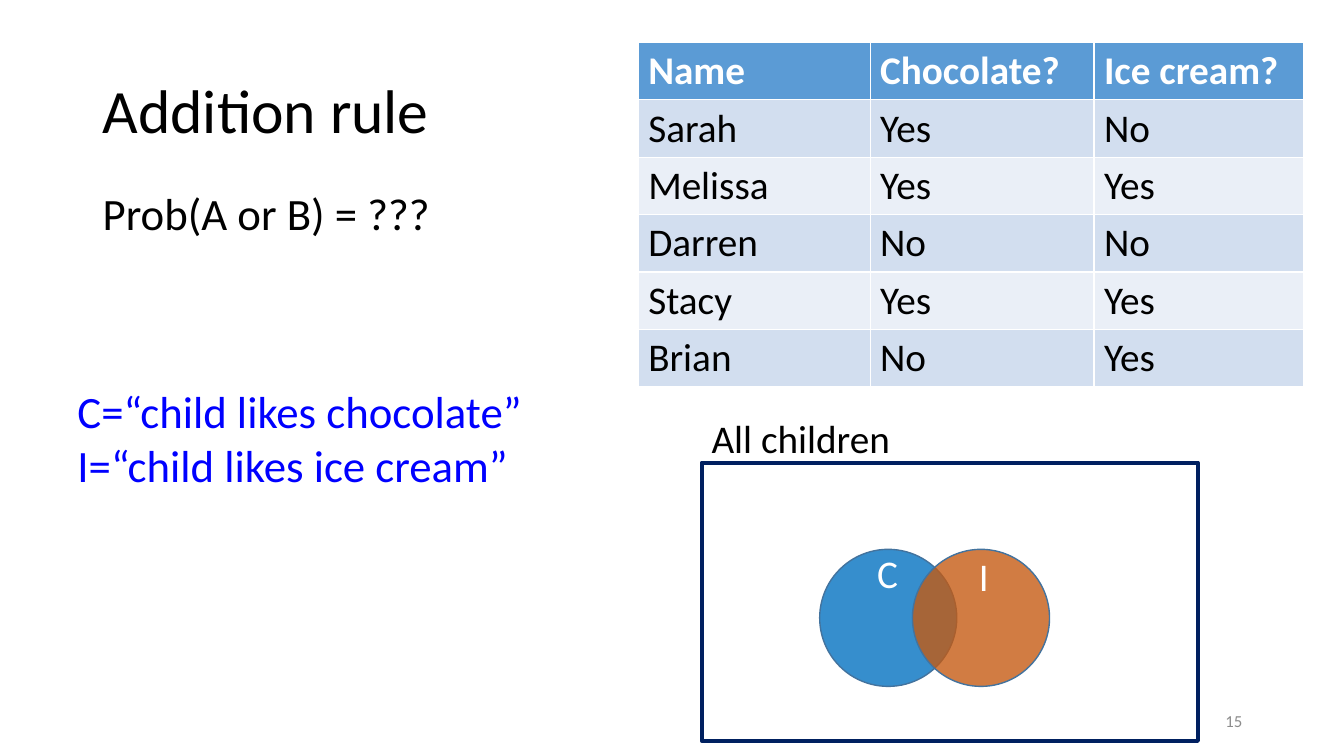
import pptx
import pptx.util
import pptx.dml.color
import pptx.enum.shapes
import pptx.enum.text
import pptx.oxml.ns
import lxml.etree

Inches = pptx.util.Inches
Pt = pptx.util.Pt
Shape = pptx.enum.shapes.MSO_SHAPE
Align = pptx.enum.text.PP_ALIGN
Anchor = pptx.enum.text.MSO_ANCHOR


def color(code):
    return pptx.dml.color.RGBColor.from_string(code)


def label(box, lines, size, code, wrap=True):
    item = slide.shapes.add_textbox(*[Inches(n) for n in box])
    frame = item.text_frame
    frame.text = lines
    frame.word_wrap = wrap
    for para in frame.paragraphs:
        for run in para.runs:
            run.font.size = Pt(size)
            run.font.name = "Calibri"
            run.font.color.rgb = color(code)
    return frame


deck = pptx.Presentation()
deck.slide_width = Inches(13.33)
deck.slide_height = Inches(7.5)
slide = deck.slides.add_slide(deck.slide_layouts[6])

title = label((0.92, 0.4, 11.5, 1.45), "Addition rule", 44, "000000")
title.vertical_anchor = Anchor.MIDDLE
title.paragraphs[0].line_spacing = 0.9

body = label((0.92, 1.85, 11.5, 4.42), "Prob(A or B) = ???", 32, "000000")
body.paragraphs[0].line_spacing = 0.9
body.paragraphs[0].space_before = Pt(10)

rows = [
    ("Name", "Chocolate?", "Ice cream?"),
    ("Sarah", "Yes", "No"),
    ("Melissa", "Yes", "Yes"),
    ("Darren", "No", "No"),
    ("Stacy", "Yes", "Yes"),
    ("Brian", "No", "Yes"),
]
table = slide.shapes.add_table(
    len(rows), 3, Inches(6.33), Inches(0.42), Inches(6.6), Inches(3.42)
).table
for column, width in zip(table.columns, (2.3, 2.22, 2.08)):
    column.width = Inches(width)
for r, row in enumerate(rows):
    head = r == 0
    fill = "5B9BD5" if head else ("EAEFF7", "D2DEEF")[r % 2]
    for c, word in enumerate(row):
        cell = table.cell(r, c)
        cell.text_frame.text = word
        cell.fill.solid()
        cell.fill.fore_color.rgb = color(fill)
        font = cell.text_frame.paragraphs[0].runs[0].font
        font.size = Pt(28)
        font.name = "Calibri"
        font.bold = head
        font.color.rgb = color("FFFFFF" if head else "000000")

frame = slide.shapes.add_shape(
    Shape.RECTANGLE, Inches(6.96), Inches(4.59), Inches(4.92), Inches(2.76)
)
frame.shadow.inherit = False
frame.fill.background()
frame.line.color.rgb = color("002060")
frame.line.width = Pt(3)
label((6.96, 4.06, 4.44, 0.57), "All children", 28, "000000")

sets = [
    (8.13, "0070C0", "C", 8.6, 5.4),
    (9.05, "C55A11", "I", 9.61, 5.43),
]
for left, fill, name, x, y in sets:
    circle = slide.shapes.add_shape(
        Shape.OVAL, Inches(left), Inches(5.45), Inches(1.36), Inches(1.36)
    )
    circle.shadow.inherit = False
    circle.fill.solid()
    circle.fill.fore_color.rgb = color(fill)
    tint = circle.fill._xPr.find(".//" + pptx.oxml.ns.qn("a:srgbClr"))
    lxml.etree.SubElement(tint, pptx.oxml.ns.qn("a:alpha"), val="79000")
    circle.line.color.rgb = color("43739E")
    circle.line.width = Pt(1)
    label((x, y, 0.41, 0.57), name, 28, "FFFFFF")

label(
    (0.67, 3.76, 4.66, 1.18),
    "C=“child likes chocolate”\nI=“child likes ice cream”",
    32,
    "0000FF",
    False,
)

number = label((9.42, 6.95, 3, 0.4), "15", 12, "8C8C8C")
number.vertical_anchor = Anchor.MIDDLE
number.paragraphs[0].alignment = Align.RIGHT

deck.save("out.pptx")
